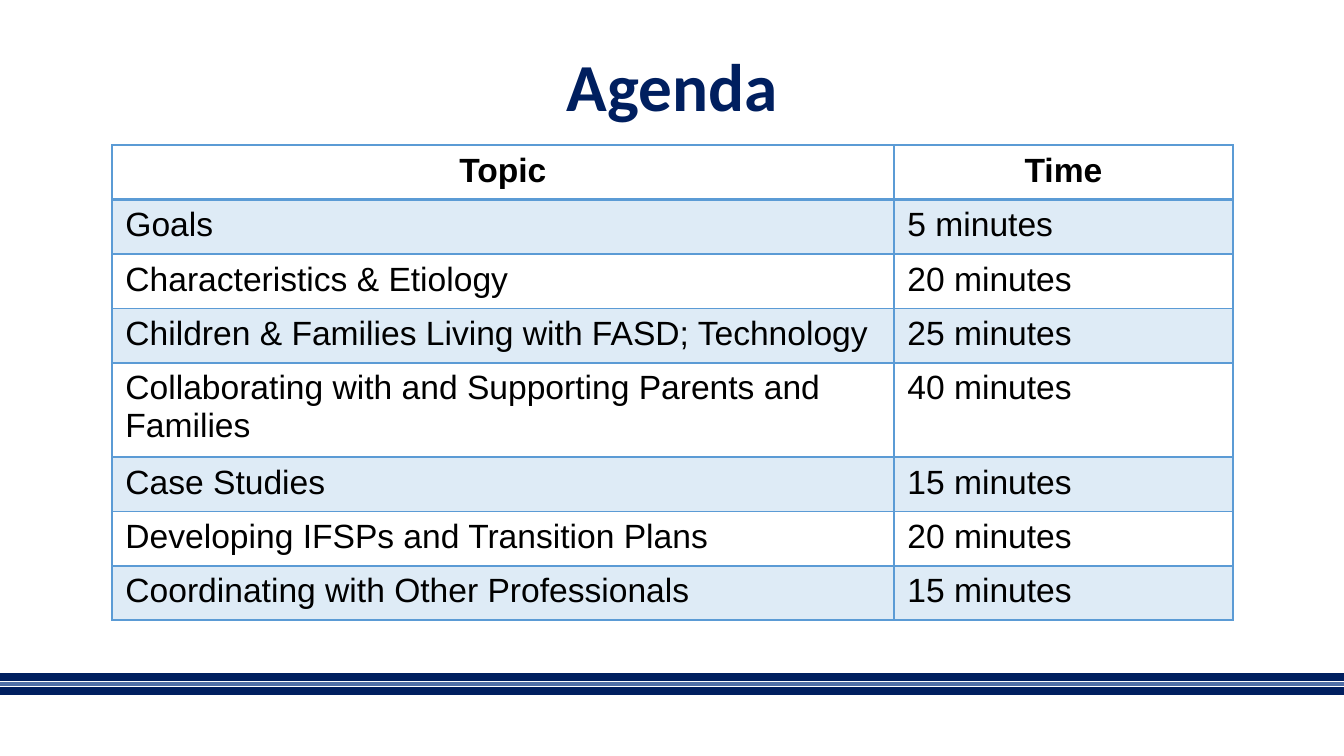
import pptx
import pptx.dml.color
import pptx.enum.shapes
import pptx.enum.text
import pptx.oxml.ns
import pptx.util
from lxml import etree

SLIDE_WIDTH, SLIDE_HEIGHT = 1344, 756
SCALE = pptx.util.Inches(10) / SLIDE_WIDTH

COLORS = {
    "navy": "001F5F",
    "slate": "5070A7",
    "blue": "5B9BD5",
    "black": "000000",
}

AGENDA = [
    ("Topic", "Time"),
    ("Goals", "5 minutes"),
    ("Characteristics & Etiology", "20 minutes"),
    ("Children & Families Living with FASD; Technology", "25 minutes"),
    ("Collaborating with and Supporting Parents and Families", "40 minutes"),
    ("Case Studies", "15 minutes"),
    ("Developing IFSPs and Transition Plans", "20 minutes"),
    ("Coordinating with Other Professionals", "15 minutes"),
]


def px(length):
    return pptx.util.Emu(round(length * SCALE))


def rgb(name):
    return pptx.dml.color.RGBColor.from_string(COLORS[name])


def add_element(parent, tag, **attributes):
    return etree.SubElement(parent, pptx.oxml.ns.qn(tag), attributes)


def add_run(paragraph, text, font_name, size, color, bold):
    run = paragraph.add_run()
    run.text = text
    run.font.name = font_name
    run.font.size = pptx.util.Pt(size)
    run.font.bold = bold
    run.font.color.rgb = rgb(color)


def add_footer_stripes(slide, left, top, width, height):
    """Draw three stripes whose centre lines span the height of the box."""
    stripes = [("navy", 4.5), ("slate", 2.25), ("navy", 4.5)]
    gap = height / (len(stripes) - 1)
    for index, (color, weight) in enumerate(stripes):
        y = px(top + index * gap)
        stripe = slide.shapes.add_connector(
            pptx.enum.shapes.MSO_CONNECTOR.STRAIGHT, px(left), y, px(left + width), y
        )
        stripe.line.color.rgb = rgb(color)
        stripe.line.width = pptx.util.Pt(weight)
        add_element(stripe._element.spPr, "a:effectLst")


def add_title(slide, left, top, width, height):
    title = slide.shapes.add_textbox(px(left), px(top), px(width), px(height))
    frame = title.text_frame
    frame.word_wrap = True
    frame.vertical_anchor = pptx.enum.text.MSO_ANCHOR.TOP
    frame.margin_left = frame.margin_right = pptx.util.Inches(0.1)
    frame.margin_top = frame.margin_bottom = pptx.util.Inches(0.1)
    paragraph = frame.paragraphs[0]
    paragraph.alignment = pptx.enum.text.PP_ALIGN.CENTER
    paragraph.line_spacing = 0.9
    add_run(paragraph, "Agenda", "Calibri", 36, "navy", True)


def set_borders(cell, bottom_weight, top_weight):
    """Insert the four borders ahead of the cell's fill, as the schema asks."""
    properties = cell._tc.get_or_add_tcPr()
    weights = {"a:lnL": 1, "a:lnR": 1, "a:lnT": top_weight, "a:lnB": bottom_weight}
    for index, (tag, weight) in enumerate(weights.items()):
        border = add_element(properties, tag, w=str(pptx.util.Pt(weight)))
        fill = add_element(border, "a:solidFill")
        add_element(fill, "a:srgbClr", val=COLORS["blue"])
        properties.insert(index, border)


def set_fill(cell, banded):
    if not banded:
        cell.fill.background()
        return
    cell.fill.solid()
    cell.fill.fore_color.rgb = rgb("blue")
    color = cell._tc.tcPr.find(".//" + pptx.oxml.ns.qn("a:srgbClr"))
    add_element(color, "a:alpha", val="20000")


def add_agenda_table(slide, left, top, width, height):
    table = slide.shapes.add_table(
        len(AGENDA), 2, px(left), px(top), px(width), px(height)
    ).table
    topic_width = 782
    table.columns[0].width = px(topic_width)
    table.columns[1].width = px(width - topic_width)
    for row, texts in enumerate(AGENDA):
        is_header = row == 0
        for column, text in enumerate(texts):
            cell = table.cell(row, column)
            set_fill(cell, banded=row % 2 == 1)
            set_borders(cell, 2 if is_header else 1, 2 if row == 1 else 1)
            paragraph = cell.text_frame.paragraphs[0]
            if is_header:
                paragraph.alignment = pptx.enum.text.PP_ALIGN.CENTER
            add_run(paragraph, text, "Arial", 18, "black", is_header)


def main():
    presentation = pptx.Presentation()
    presentation.slide_width = px(SLIDE_WIDTH)
    presentation.slide_height = px(SLIDE_HEIGHT)
    slide = presentation.slides.add_slide(presentation.slide_layouts[6])
    add_footer_stripes(slide, 0, 677, SLIDE_WIDTH, 14)
    add_title(slide, 93, 40, 1158, 146)
    add_agenda_table(slide, 112, 145, 1121, 436)
    presentation.save("out.pptx")


if __name__ == "__main__":
    main()
